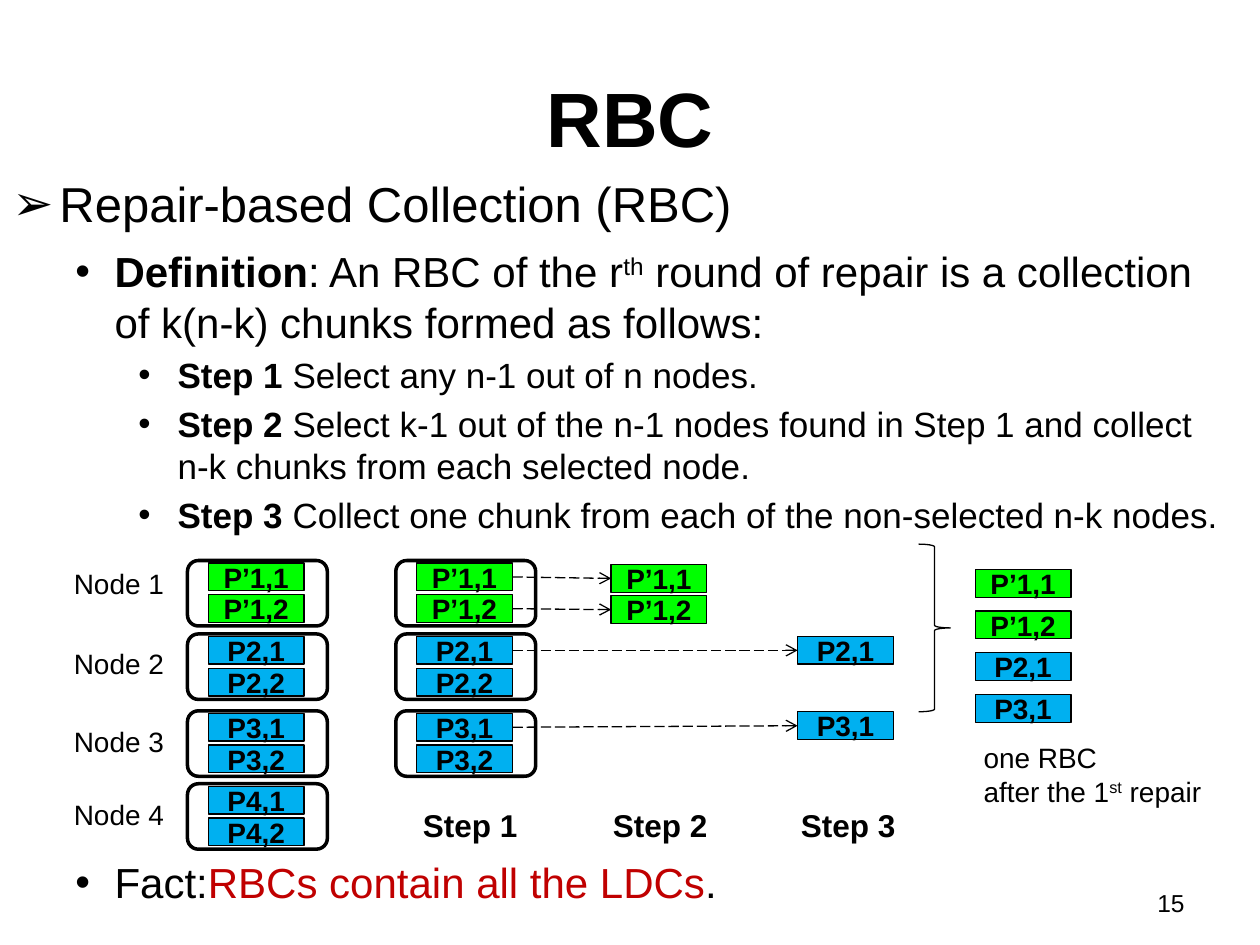
from pptx import Presentation
from pptx.util import Cm, Pt
from pptx.dml.color import RGBColor
from pptx.enum.dml import MSO_LINE
from pptx.enum.shapes import MSO_CONNECTOR, MSO_SHAPE
from pptx.enum.text import MSO_ANCHOR, PP_ALIGN
from pptx.oxml.ns import qn
from lxml.etree import SubElement

HUE = {"ink": "000000", "red": "C00000", "green": "00FF00", "blue": "00B0F0"}

HEAD = [[("Repair-based Collection (RBC)", "")]]
DEFN = [[("Definition", "b"), (": An RBC of the r", ""), ("th", "sup"),
         (" round of repair is a collection of k(n-k) chunks formed as follows:", "")]]
STEPS = [
    [("Step 1 ", "b"), ("Select any n-1 out of n nodes.", "")],
    [("Step 2", "b"), (" Select k-1 out of the n-1 nodes found in Step 1 and collect "
                       "n-k chunks from each selected node.", "")],
    [("Step 3", "b"), (" Collect one chunk from each of the non-selected n-k nodes.", "")],
]
FACT = [[("Fact:", ""), ("RBCs contain all the LDCs", "red"), (".", "")]]
NOTE = [[("one RBC", "")],
        [("after the 1", ""), ("st", "sup"), (" repair", "")]]

NODES = [("Node 1", 11.3, 11.3, ["P’1,1", "P’1,2"]),
         ("Node 2", 12.78, 12.9, ["P2,1", "P2,2"]),
         ("Node 3", 14.33, 14.48, ["P3,1", "P3,2"]),
         ("Node 4", 15.8, 15.95, ["P4,1", "P4,2"])]
GROUPS = [(3.78, 4), (7.98, 3)]
PICKS = [("P’1,1", 12.32, 11.38), ("P’1,2", 12.32, 12.01),
         ("P2,1", 16.08, 12.83), ("P3,1", 16.08, 14.35)]
LABELS = [("Step 1", 8.26), ("Step 2", 12.09), ("Step 3", 15.88)]

deck = Presentation()
deck.slide_width, deck.slide_height = Cm(25.4), Cm(19.05)
slide = deck.slides.add_slide(deck.slide_layouts[6])
shapes = slide.shapes


def color(name):
    return RGBColor.from_string(HUE[name])


def write(frame, text, size=16, bold=False, align=PP_ALIGN.LEFT, anchor=MSO_ANCHOR.TOP,
          wrap=True, bullet=None, indent=(0, 0), before=0, more=False):
    frame.word_wrap = wrap
    frame.vertical_anchor = anchor
    paras = [[(text, "")]] if isinstance(text, str) else text
    for i, runs in enumerate(paras):
        para = frame.add_paragraph() if more or i else frame.paragraphs[0]
        para.alignment = align
        para.space_before = Pt(before)
        if bullet:
            props = para._p.get_or_add_pPr()
            props.set("marL", str(Cm(indent[0])))
            props.set("indent", str(Cm(indent[1])))
            SubElement(props, qn("a:buFont")).set("typeface", "Arial")
            SubElement(props, qn("a:buChar")).set("char", bullet)
        for words, mark in runs:
            run = para.add_run()
            run.text = words
            font = run.font
            font.name, font.size = "Arial", Pt(size)
            font.bold = bold or mark == "b"
            font.color.rgb = color("red" if mark == "red" else "ink")
            if mark == "sup":
                run._r.get_or_add_rPr().set("baseline", "30000")


def label(text, x, y, w, h, **style):
    frame = shapes.add_textbox(Cm(x), Cm(y), Cm(w), Cm(h)).text_frame
    write(frame, text, **style)
    return frame


def block(kind, x, y, w, h, fill=None, width=0.75):
    shape = shapes.add_shape(kind, Cm(x), Cm(y), Cm(w), Cm(h))
    shape.shadow.inherit = False
    if fill:
        shape.fill.solid()
        shape.fill.fore_color.rgb = color(fill)
    else:
        shape.fill.background()
    shape.line.color.rgb = color("ink")
    shape.line.width = Pt(width)
    return shape


def chunk(name, x, y):
    fresh = "’" in name
    shape = block(MSO_SHAPE.RECTANGLE, x, y, 1.93, 0.56, "green" if fresh else "blue")
    frame = shape.text_frame
    frame.margin_left = frame.margin_right = frame.margin_top = frame.margin_bottom = 0
    write(frame, name, bold=True, align=PP_ALIGN.CENTER, anchor=MSO_ANCHOR.MIDDLE, wrap=False)
    return shape


def arrow(start, end):
    link = shapes.add_connector(MSO_CONNECTOR.STRAIGHT, 0, 0, 0, 0)
    link.begin_connect(start, 3)
    link.end_connect(end, 1)
    link.line.color.rgb = color("ink")
    link.line.width = Pt(0.75)
    link.line.dash_style = MSO_LINE.LONG_DASH
    SubElement(link.line._get_or_add_ln(), qn("a:tailEnd")).set("type", "arrow")
    SubElement(link._element.spPr, qn("a:effectLst"))


label("RBC", 1.27, 0.76, 22.86, 3.18, size=44, bold=True,
      align=PP_ALIGN.CENTER, anchor=MSO_ANCHOR.MIDDLE)
label(HEAD, 0, 3.38, 25.4, 1.47, size=28, bullet="➢", indent=(0.95, -0.95), before=14)
second = dict(size=24, bullet="•", indent=(2.06, -0.79), before=4.8)
body = label(DEFN, 0, 4.83, 24.97, 6.35, **second)
write(body, STEPS, size=20, bullet="•", indent=(3.33, -0.79), before=4, more=True)
label(FACT, 0, 17.15, 24.97, 1.7, **second)

for name, _, y, _ in NODES:
    label(name, 1.24, y, 2.74, 0.94)

source = {}
for x, count in GROUPS:
    for _, y, _, names in NODES[:count]:
        for i, name in enumerate(names):
            source[name] = chunk(name, x + 0.42, y + 0.05 + 0.64 * i)
        block(MSO_SHAPE.ROUNDED_RECTANGLE, x, y, 2.82, 1.32, width=2)

for i, (name, x, y) in enumerate(PICKS):
    arrow(source[name], chunk(name, x, y))
    chunk(name, 19.66, 11.48 + 0.84 * i)

for name, x in LABELS:
    label(name, x, 16.13, 2.44, 1.02, size=18, bold=True, align=PP_ALIGN.CENTER, wrap=False)
block(MSO_SHAPE.RIGHT_BRACE, 18.52, 10.97, 0.64, 3.38)
label(NOTE, 19.58, 14.81, 5.38, 1.63)
label("15", 18.21, 17.78, 5.92, 0.89, size=14, align=PP_ALIGN.RIGHT)

deck.save("out.pptx")
